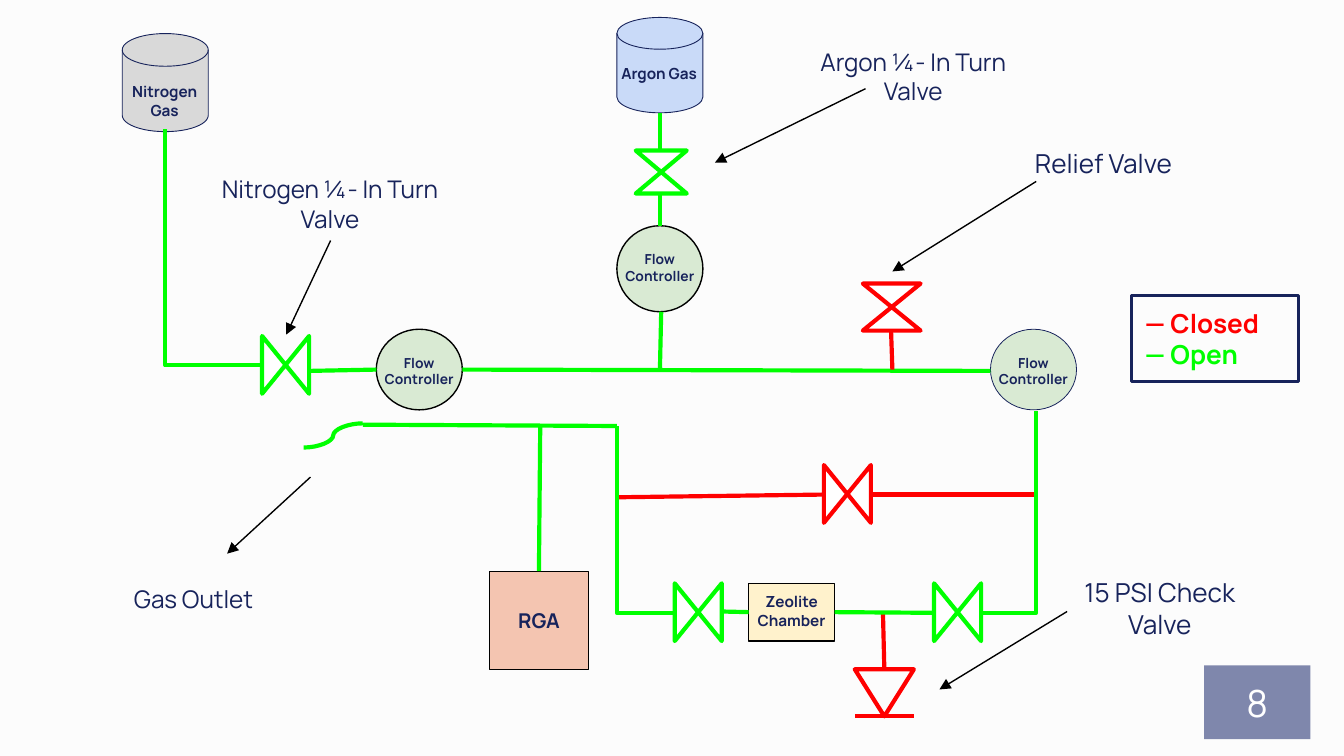
from lxml.etree import SubElement
from pptx import Presentation
from pptx.dml.color import RGBColor
from pptx.enum.shapes import MSO_CONNECTOR, MSO_SHAPE
from pptx.enum.text import MSO_ANCHOR, PP_ALIGN
from pptx.oxml.ns import qn
from pptx.util import Pt

PX = 9144
WIDTH = 1000
FONT = "Manrope"
NAVY, BLACK, WHITE, PAPER = "17235B", "000000", "FFFFFF", "FCFCFC"
OPEN, CLOSED = "00FF00", "FF0000"
PIPE, THIN = 2.25, 0.75
DISK = MSO_SHAPE.FLOWCHART_MAGNETIC_DISK
CIRCLE = MSO_SHAPE.FLOWCHART_CONNECTOR
RECT = MSO_SHAPE.RECTANGLE
STRAIGHT, BENT, CURVED = MSO_CONNECTOR.STRAIGHT, MSO_CONNECTOR.ELBOW, MSO_CONNECTOR.CURVE

VALVES = [
    ((191, 254, 43, 35), 270, OPEN),
    ((473, 112, 38, 32), 0, OPEN),
    ((609, 350, 43, 35), 270, CLOSED),
    ((691, 438, 43, 35), 270, OPEN),
    ((498, 438, 43, 35), 270, OPEN),
    ((642, 211, 43, 35), 0, CLOSED),
]
UNITS = [
    (DISK, (91, 25, 64, 73), "D9D9D9", NAVY, 0.47, "Nitrogen Gas", (87, 55, 71, 40), 8.2, 6),
    (DISK, (459, 13, 64, 71), "C9DAF8", NAVY, 0.47, "Argon Gas", (455, 41, 71, 27), 8.2, 6),
    (RECT, (364, 425, 74, 73), "F4C5B1", BLACK, 0.63, "RGA", (354, 444, 94, 35), 10.9, 8),
    (CIRCLE, (459, 168, 64, 64), "D9EAD3", BLACK, 0.75, "Flow Controller", (459, 181, 64, 36), 7.4, 6),
    (CIRCLE, (280, 245, 64, 60), "D9EAD3", BLACK, 0.75, "Flow Controller", (280, 258, 64, 36), 7.4, 6),
    (CIRCLE, (737, 245, 64, 60), "D9EAD3", NAVY, 0.43, "Flow Controller", (737, 258, 64, 36), 7.4, 6),
    (RECT, (557, 434, 64, 43), "FFF2CC", BLACK, 0.75, "Zeolite Chamber", (557, 433, 64, 43), 8.2, 6),
]
PIPES = [
    (STRAIGHT, (230, 276, 280, 275), OPEN),
    (STRAIGHT, (491, 84, 491, 112), OPEN),
    (STRAIGHT, (491, 143, 491, 168), OPEN),
    (STRAIGHT, (492, 232, 491, 276), OPEN),
    (STRAIGHT, (344, 275, 737, 276), OPEN),
    (STRAIGHT, (663, 246, 664, 275), CLOSED),
    (STRAIGHT, (648, 368, 772, 368), CLOSED),
    (STRAIGHT, (460, 370, 613, 368), CLOSED),
    (STRAIGHT, (680, 533, 636, 533), CLOSED),
    (STRAIGHT, (658, 498, 657, 456), CLOSED),
    (STRAIGHT, (459, 317, 270, 316), OPEN),
    (CURVED, (270, 315, 226, 333), OPEN),
    (BENT, (730, 456, 771, 306), OPEN),
    (BENT, (502, 456, 459, 317), OPEN),
    (BENT, (195, 272, 123, 96), OPEN),
]
JOINED_PIPES = [
    ((401, 425, 402, 317), "RGA", 0),
    ((621, 455, 695, 456), "Zeolite Chamber", 3),
    ((557, 455, 537, 455), "Zeolite Chamber", 1),
]
LABELS = [
    ("Relief Valve", (752, 100, 138, 55), 14, (771, 135, 664, 202)),
    ("Nitrogen ¼- In Turn Valve", (152, 120, 187, 37), 13, (246, 179, 213, 249)),
    ("Gas Outlet", (67, 425, 154, 32), 13, (231, 355, 169, 412)),
    ("15 PSI Check Valve", (794, 419, 138, 43), 14, (794, 455, 699, 513)),
    ("Argon ¼- In Turn Valve", (586, 25, 187, 37), 13, (644, 66, 532, 121)),
]
LEGEND = [("— Closed", CLOSED), ("— Open", OPEN)]


def emu(lengths):
    return [n * PX for n in lengths]


def rgb(color):
    return RGBColor.from_string(color)


def add_shape(shapes, kind, box, fill=None, line=None, width=PIPE):
    sp = shapes.add_shape(kind, *emu(box))
    sp.shadow.inherit = False
    if fill:
        sp.fill.solid()
        sp.fill.fore_color.rgb = rgb(fill)
    else:
        sp.fill.background()
    if line:
        sp.line.color.rgb = rgb(line)
        sp.line.width = Pt(width)
    else:
        sp.line.fill.background()
    return sp


def write(sp, lines, size, bold=False, inset=10, align=PP_ALIGN.CENTER, anchor=MSO_ANCHOR.MIDDLE):
    tf = sp.text_frame
    tf.word_wrap = True
    tf.vertical_anchor = anchor
    tf.margin_left = tf.margin_right = tf.margin_top = tf.margin_bottom = inset * PX
    for i, (text, color) in enumerate(lines):
        p = tf.add_paragraph() if i else tf.paragraphs[0]
        p.alignment = align
        r = p.add_run()
        r.text = text
        r.font.name, r.font.size, r.font.bold = FONT, Pt(size), bold
        r.font.color.rgb = rgb(color)


def add_line(shapes, kind, ends, color, width=PIPE, arrow=False):
    cxn = shapes.add_connector(kind, *emu(ends))
    cxn.line.color.rgb = rgb(color)
    cxn.line.width = Pt(width)
    spPr = cxn._element.spPr
    if kind == BENT:
        spPr.find(qn("a:prstGeom")).set("prst", "bentConnector2")
    if arrow:
        SubElement(spPr.find(qn("a:ln")), qn("a:tailEnd"), type="triangle")
    SubElement(spPr, qn("a:effectLst"))
    return cxn


def main():
    """Build the gas flow diagram slide."""
    prs = Presentation()
    prs.slide_width = WIDTH * PX
    prs.slide_height = WIDTH * PX * 9 // 16
    s = prs.slides.add_slide(prs.slide_layouts[6])
    s.background.fill.solid()
    s.background.fill.fore_color.rgb = rgb(PAPER)

    for box, rotation, color in VALVES:
        add_shape(s.shapes, MSO_SHAPE.FLOWCHART_COLLATE, box, WHITE, color).rotation = rotation
    check = add_shape(s.shapes, MSO_SHAPE.ISOSCELES_TRIANGLE, (636, 498, 44, 35), PAPER, CLOSED)
    check.rotation = 180

    units = {}
    for kind, box, fill, line, width, text, text_box, size, inset in UNITS:
        group = s.shapes.add_group_shape()
        units[text] = add_shape(group.shapes, kind, box, fill, line, width)
        tb = group.shapes.add_textbox(*emu(text_box))
        write(tb, [(text, NAVY)], size, True, inset)

    for kind, ends, color in PIPES:
        add_line(s.shapes, kind, ends, color)
    for ends, unit, side in JOINED_PIPES:
        add_line(s.shapes, STRAIGHT, ends, OPEN).begin_connect(units[unit], side)

    for text, box, size, arrow in LABELS:
        add_line(s.shapes, STRAIGHT, arrow, BLACK, THIN, True)
        tb = s.shapes.add_textbox(*emu(box))
        write(tb, [(text, NAVY)], size, anchor=MSO_ANCHOR.TOP)

    legend = add_shape(s.shapes, RECT, (842, 220, 124, 64), line=NAVY, width=1.5)
    write(legend, LEGEND, 14, True, align=PP_ALIGN.LEFT)
    number = add_shape(s.shapes, RECT, (896, 495, 79, 55), "7F87AC")
    write(number, [("8", WHITE)], 20)
    prs.save("out.pptx")


if __name__ == "__main__":
    main()
